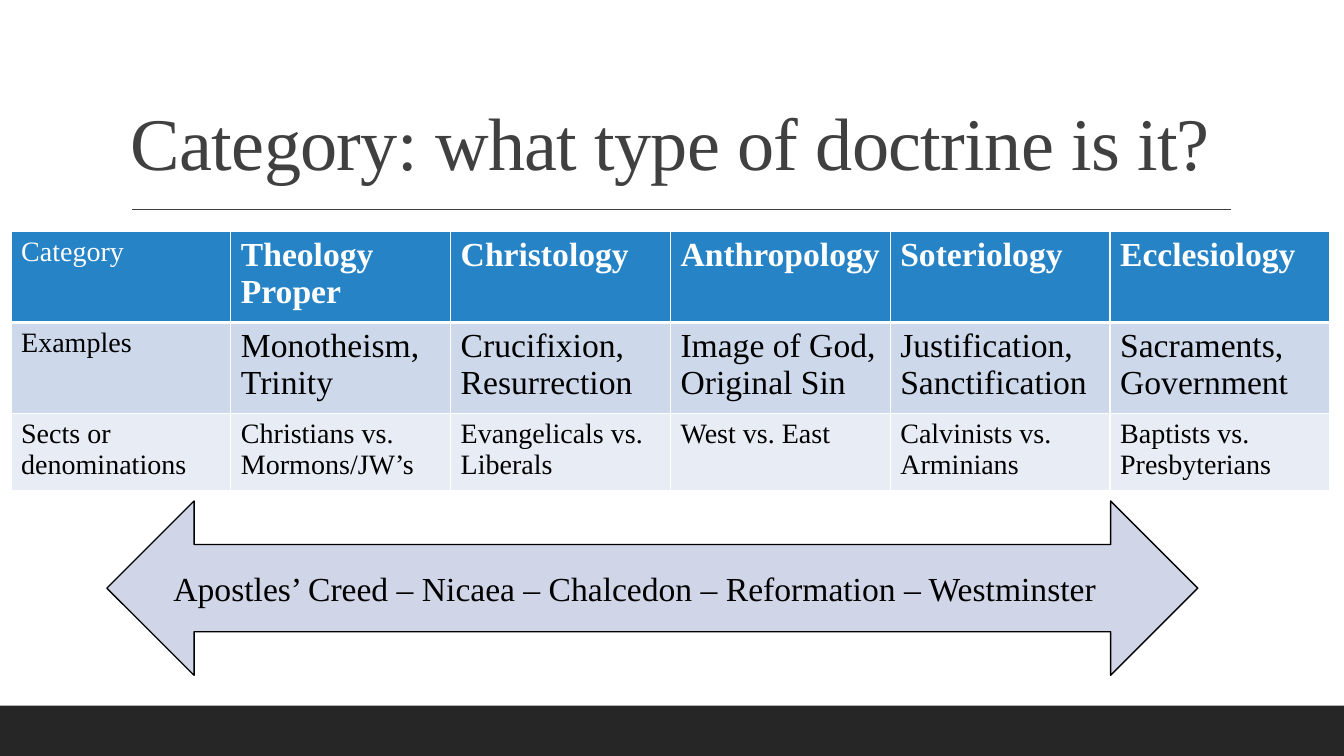
"""Build a slide that sorts doctrines by category."""
import pptx
import pptx.util
import pptx.dml.color
import pptx.enum.shapes
import pptx.enum.text
import pptx.oxml.ns
from lxml import etree

TITLE = "Category: what type of doctrine is it?"
TABLE = [
    ["Category", "Theology Proper", "Christology", "Anthropology", "Soteriology", "Ecclesiology"],
    ["Examples", "Monotheism, Trinity", "Crucifixion, Resurrection",
     "Image of God, Original Sin", "Justification, Sanctification", "Sacraments, Government"],
    ["Sects or\ndenominations", "Christians vs. Mormons/JW’s", "Evangelicals vs. Liberals",
     "West vs. East", "Calvinists vs. Arminians", "Baptists vs.\nPresbyterians"],
]
CREEDS = "Apostles’ Creed – Nicaea – Chalcedon – Reformation – Westminster\t"
FONT = "Times New Roman"
COLORS = {"dark": "262626", "title": "404040", "white": "FFFFFF", "black": "000000", "arrow": "D0D5E7"}
ROWS = [
    {"fill": "2683C6", "color": "white", "size": 24, "bold": True, "height": 0.83},
    {"fill": "CDD9EA", "color": "black", "size": 24, "bold": False, "height": 0.83},
    {"fill": "E8EDF5", "color": "black", "size": 20, "bold": False, "height": 0.71},
]
LABEL_SIZE = 20
W, H = 13.33, 7.5
FOOTER_H = H / 15
COL_W = 2.18
RULE = (1.31, 12.21, 2.08)
MSO = pptx.enum.shapes.MSO_SHAPE
ANCHOR = pptx.enum.text.MSO_ANCHOR
inch = pptx.util.Inches


def rgb(value):
    return pptx.dml.color.RGBColor.from_string(value)


def add_run(p, text, size, color, bold=False):
    r = p.add_run()
    r.text = text
    r.font.name, r.font.size, r.font.bold = FONT, pptx.util.Pt(size), bold
    r.font.color.rgb = rgb(COLORS[color])
    return r


def add_box(s, kind, box, fill, line=None):
    sp = s.shapes.add_shape(kind, *map(inch, box))
    sp.shadow.inherit = False
    sp.fill.solid()
    sp.fill.fore_color.rgb = rgb(COLORS[fill])
    if line:
        sp.line.color.rgb = rgb(COLORS[line])
        sp.line.width = pptx.util.Pt(1)
    else:
        sp.line.fill.background()
    return sp


def add_border(cell, side, points):
    tag = pptx.oxml.ns.qn
    ln = etree.SubElement(cell._tc.get_or_add_tcPr(), tag("a:ln" + side), w=str(pptx.util.Pt(points)))
    fill = etree.SubElement(ln, tag("a:solidFill"))
    etree.SubElement(fill, tag("a:srgbClr"), val=COLORS["white"])


def add_title(s):
    tf = s.shapes.add_textbox(*map(inch, (1.2, 0.31, 11, 1.59))).text_frame
    tf.word_wrap, tf.vertical_anchor = True, ANCHOR.BOTTOM
    p = tf.paragraphs[0]
    p.line_spacing = 0.9
    r = add_run(p, TITLE, 53, "title")
    r._r.get_or_add_rPr().set("spc", "-50")


def add_rule(s):
    x1, x2, y = map(inch, RULE)
    line = s.shapes.add_connector(pptx.enum.shapes.MSO_CONNECTOR.STRAIGHT, x1, y, x2, y)
    line.line.color.rgb = rgb(COLORS["title"])
    line.line.width = pptx.util.Pt(1)
    etree.SubElement(line._element.spPr, pptx.oxml.ns.qn("a:effectLst"))


def add_doctrines(s):
    cols = len(TABLE[0])
    height = sum(row["height"] for row in ROWS)
    table = s.shapes.add_table(len(TABLE), cols, *map(inch, (0.11, 2.3, cols * COL_W, height))).table
    for col in table.columns:
        col.width = inch(COL_W)
    for i, (texts, style) in enumerate(zip(TABLE, ROWS)):
        table.rows[i].height = inch(style["height"])
        for j, text in enumerate(texts):
            cell = table.cell(i, j)
            for side in "LRTB":
                add_border(cell, side, 3 if (i, side) in ((0, "B"), (1, "T")) else 1)
            cell.fill.solid()
            cell.fill.fore_color.rgb = rgb(style["fill"])
            size = style["size"] if j else LABEL_SIZE
            tf = cell.text_frame
            for k, part in enumerate(text.split("\n")):
                p = tf.add_paragraph() if k else tf.paragraphs[0]
                add_run(p, part, size, style["color"], style["bold"] and j > 0)


def add_arrow(s):
    sp = add_box(s, MSO.LEFT_RIGHT_ARROW, (1.06, 4.97, 10.82, 1.73), "arrow", "black")
    tf = sp.text_frame
    tf.word_wrap, tf.vertical_anchor = True, ANCHOR.MIDDLE
    p = tf.paragraphs[0]
    p.alignment = pptx.enum.text.PP_ALIGN.CENTER
    add_run(p, CREEDS, 24, "black")


def main():
    prs = pptx.Presentation()
    prs.slide_width, prs.slide_height = inch(W), inch(H)
    s = prs.slides.add_slide(prs.slide_layouts[6])
    add_box(s, MSO.RECTANGLE, (0, H - FOOTER_H, W, FOOTER_H), "dark")
    add_rule(s)
    add_title(s)
    add_doctrines(s)
    add_arrow(s)
    prs.save("out.pptx")


if __name__ == "__main__":
    main()
